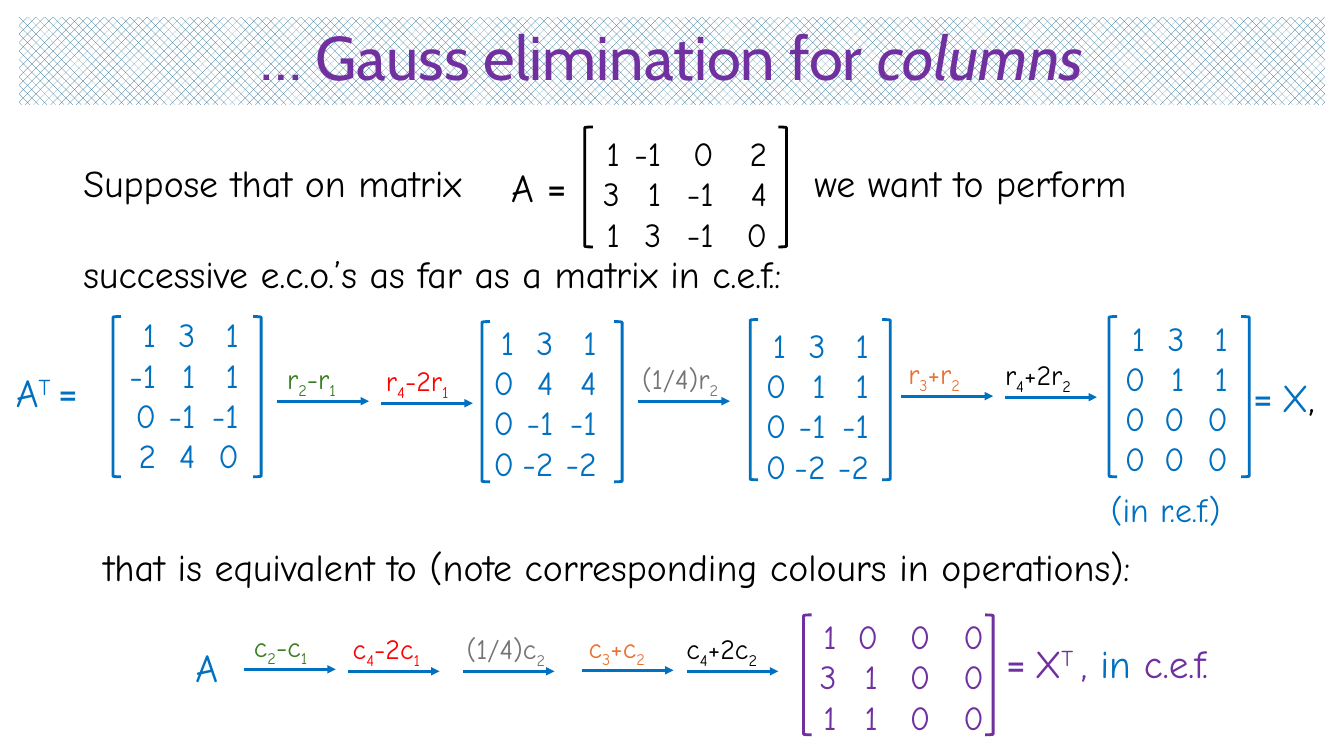
from lxml import etree
from pptx import Presentation
from pptx.dml.color import RGBColor
from pptx.enum.dml import MSO_PATTERN
from pptx.enum.shapes import MSO_CONNECTOR, MSO_SHAPE
from pptx.enum.text import MSO_ANCHOR, MSO_AUTO_SIZE, PP_ALIGN
from pptx.oxml.ns import qn
from pptx.util import Inches, Pt

LEFT_BRACKET, RIGHT_BRACKET = MSO_SHAPE.LEFT_BRACKET, MSO_SHAPE.RIGHT_BRACKET
RECTANGLE, STRAIGHT = MSO_SHAPE.RECTANGLE, MSO_CONNECTOR.STRAIGHT
WEAVE, MIDDLE, CENTER = MSO_PATTERN.WEAVE, MSO_ANCHOR.MIDDLE, PP_ALIGN.CENTER
GROW = MSO_AUTO_SIZE.SHAPE_TO_FIT_TEXT

BLACK = RGBColor(0x00, 0x00, 0x00)
WHITE = RGBColor(0xFF, 0xFF, 0xFF)
BLUE = RGBColor(0x00, 0x70, 0xC0)
PURPLE = RGBColor(0x70, 0x30, 0xA0)
TEAL = RGBColor(0x15, 0x60, 0x82)
GREEN = RGBColor(0x3B, 0x7D, 0x23)
RED = RGBColor(0xFF, 0x00, 0x00)
GREY = RGBColor(0x74, 0x74, 0x74)
ORANGE = RGBColor(0xE9, 0x71, 0x32)

CELL = Inches(0.1)  # the grid has 133.3 columns and 75 rows
HAND, SANS = "Comic Neue", "Cabin"
SUB, SUPER = "-25000", "30000"
BRACKET_W, ARROW_W, LABEL_RISE = 0.8, 9.1, 4.4
TABS = {3: (2.7, 6.6, 10.9), 4: (2.5, 6.6, 11.8, 17.1)}

# colour, label with the line letter left open, label shift from its arrow
OPERATIONS = [
    (GREEN, "{0}_2-{0}_1", 0),
    (RED, "{0}_4-2{0}_1", -0.5),
    (GREY, "(1/4){0}_2", -0.6),
    (ORANGE, "{0}_3+{0}_2", -0.3),
    (BLACK, "{0}_4+2{0}_2", -1),
]


def grid(*counts):
    return [int(n * CELL) for n in counts]


def add_run(p, text, size, color, name=HAND, base=None, italic=None):
    r = p.add_run()
    r.text = text
    for key, value in {"size": Pt(size), "name": name, "italic": italic}.items():
        setattr(r.font, key, value)
    r.font.color.rgb = color
    if base:
        r.font._element.set("baseline", base)


def set_tabs(p, stops, align):
    tabs = etree.SubElement(p._p.get_or_add_pPr(), qn("a:tabLst"))
    for stop in grid(*stops):
        etree.SubElement(tabs, qn("a:tab"), pos=str(stop), algn=align)


def add_text(slide, box, lines, wrap=True, tabs=(), align="l", gap=0):
    """Each line is a list of argument tuples for add_run."""
    tf = slide.shapes.add_textbox(*grid(*box)).text_frame
    tf.word_wrap, tf.auto_size = wrap, GROW
    for i, line in enumerate(lines):
        p = tf.add_paragraph() if i else tf.paragraphs[0]
        if i and gap:
            p.space_before = Pt(gap)
        if tabs:
            set_tabs(p, tabs, align)
        for run in line:
            add_run(p, *run)


def add_matrix(slide, box, rows, color, shift):
    """Brackets span the box; shift moves the numbers from its corner."""
    x, y, w, h = box
    for kind, left in ((LEFT_BRACKET, x), (RIGHT_BRACKET, x + w - BRACKET_W)):
        sp = slide.shapes.add_shape(kind, *grid(left, y, BRACKET_W, h))
        sp.shadow.inherit = False
        sp.fill.background()
        sp.line.color.rgb = color
        sp.line.width = Pt(2)
    lines = [[("\t" + "\t".join(row.split()), 24, color)] for row in rows]
    add_text(slide, (x + shift[0], y + shift[1], 27.2, 4.1 * len(rows)), lines,
             tabs=TABS[len(rows[0].split())], align="r")


def add_operation(slide, x, y, letter, operation):
    color, label, shift = operation
    first, *rest = label.format(letter).split("_")
    runs = [(first, 20, color)]
    for part in rest:
        runs.append((part[0], 20, color, HAND, SUB))
        if part[1:]:
            runs.append((part[1:], 20, color))
    add_text(slide, (x + shift, y - LABEL_RISE, 12.2, 4.4), [runs])
    arrow = slide.shapes.add_connector(STRAIGHT, *grid(x, y, x + ARROW_W, y))
    arrow.line.color.rgb = BLUE
    arrow.line.width = Pt(2)
    etree.SubElement(arrow.line._get_or_add_ln(), qn("a:tailEnd"), type="triangle")
    etree.SubElement(arrow._element.spPr, qn("a:effectLst"))


def add_title(slide, box):
    sp = slide.shapes.add_shape(RECTANGLE, *grid(*box))
    sp.shadow.inherit = False
    sp.line.fill.background()
    sp.fill.patterned()
    sp.fill.pattern = WEAVE
    sp.fill.fore_color.rgb = TEAL
    sp.fill.back_color.rgb = WHITE
    tf = sp.text_frame
    tf.word_wrap, tf.vertical_anchor = True, MIDDLE
    p = tf.paragraphs[0]
    p.alignment, p.line_spacing = CENTER, 0.9
    add_run(p, "… Gauss elimination for ", 44, PURPLE, SANS)
    add_run(p, "columns", 44, PURPLE, SANS, None, True)


def add_problem(slide, box):
    x, y, w, h = box
    add_text(slide, (x, y + 2.9, w, h),
             [[("Suppose that on matrix\twe want to perform", 27, BLACK)],
              [("successive e.c.o.’s as far as a matrix in c.e.f.:", 27, BLACK)]],
             tabs=(72.5,), gap=32)
    add_text(slide, (x + 42.4, y + 3.2, 8.2, 5.7),
             [[("A ", 28, BLACK), ("=", 28, BLACK, SANS)]], wrap=False)
    add_matrix(slide, (x + 50.7, y + 0.1, 20, 11.9),
               ["1 -1 0 2", "3 1 -1 4", "1 3 -1 0"], BLACK, (0, 0.1))


def add_row_steps(slide, box):
    x, y, w, _ = box
    add_text(slide, (x, y + 4.6, 9.9, 5.7),
             [[("A", 28, BLUE), ("T ", 28, BLUE, HAND, SUPER),
               ("=", 28, BLUE, SANS)]], wrap=False)
    matrices = [
        (10.6, 0, 14.7, (0.6, -0.7), ["1 3 1", "-1 1 1", "0 -1 -1", "2 4 0"]),
        (47.2, 0.5, 13.9, (-0.5, -0.5), ["1 3 1", "0 4 4", "0 -1 -1", "0 -2 -2"]),
        (73.8, 0.3, 13.9, (-0.1, 0), ["1 3 1", "0 1 1", "0 -1 -1", "0 -2 -2"]),
        (109.4, 0, 13.9, (-0.1, -0.4), ["1 3 1", "0 1 1", "0 0 0", "0 0 0"]),
    ]
    for dx, dy, width, shift, rows in matrices:
        add_matrix(slide, (x + dx, y + dy, width, 15.9), rows, BLUE, shift)
    arrows = [(26.9, 8.4), (37.2, 8.6), (62.7, 8.4), (88.8, 7.9), (99.1, 8)]
    for (dx, dy), operation in zip(arrows, OPERATIONS):
        add_operation(slide, x + dx, y + dy, "r", operation)
    add_text(slide, (x + w - 8.9, y + 5.1, 8.9, 5.7),
             [[("= ", 28, BLUE, SANS), ("X", 28, BLUE), (",", 28, BLACK)]], wrap=False)
    add_text(slide, (x + 108.6, y + 16.6, 15.9, 5),
             [[("(in r.e.f.)", 24, BLUE)]], wrap=False)


def add_column_steps(slide, box):
    x, y, w, _ = box
    add_text(slide, (x, y, w, 5.6),
             [[("that is equivalent to (note corresponding colours in operations):",
                27, BLACK)]])
    add_text(slide, (x + 9.1, y + 9.9, 4.9, 5.7), [[("A", 28, BLUE)]], wrap=False)
    arrows = [(14.9, 13), (25.2, 13.2), (36.6, 13.2), (48.4, 13.1), (58.8, 13.2)]
    for (dx, dy), operation in zip(arrows, OPERATIONS):
        add_operation(slide, x + dx, y + dy, "c", operation)
    add_matrix(slide, (x + 70.4, y + 7.6, 18.8, 11.9),
               ["1 0 0 0", "3 1 0 0", "1 1 0 0"], PURPLE, (-0.2, -0.4))
    add_text(slide, (x + 89.5, y + 9.5, 27.8, 5.7),
             [[("= ", 28, PURPLE, SANS), ("X", 28, PURPLE),
               ("T ", 28, PURPLE, HAND, SUPER), (", ", 28, PURPLE),
               ("in ", 28, BLUE), ("c.e.f.", 28, PURPLE)]], wrap=False)


def main():
    prs = Presentation()
    prs.slide_width, prs.slide_height = grid(133.3, 75)
    slide = prs.slides.add_slide(prs.slide_layouts[6])
    add_title(slide, (1.9, 1.7, 129.5, 8.7))
    add_problem(slide, (7.3, 12.5, 120.6, 14.6))
    add_row_steps(slide, (0.6, 31.4, 131.6, 21.6))
    add_column_steps(slide, (9.3, 53.4, 120.6, 19.5))
    prs.save("out.pptx")


if __name__ == "__main__":
    main()
